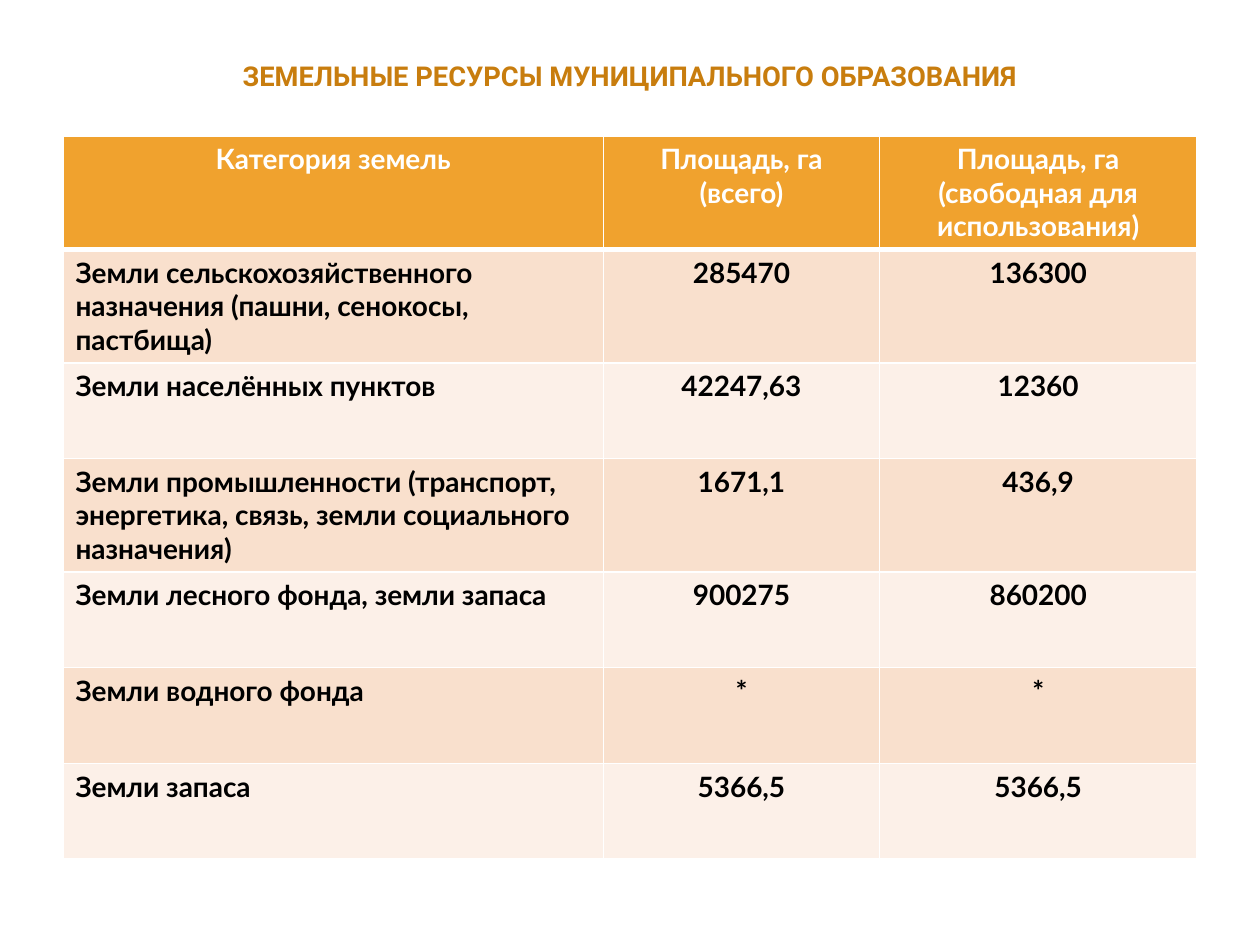
from lxml import etree
from pptx import Presentation
from pptx.dml.color import RGBColor
from pptx.enum.text import PP_ALIGN
from pptx.oxml.ns import qn
from pptx.util import Inches, Pt

LEFT, CENTER = PP_ALIGN.LEFT, PP_ALIGN.CENTER
WHITE, BLACK, TITLE_COLOR = "FFFFFF", "000000", "C87D0E"
HEADER_FILL, BAND_FILLS = "F0A22E", ("FCF0E8", "F9E0CD")

TITLE = "ЗЕМЕЛЬНЫЕ РЕСУРСЫ МУНИЦИПАЛЬНОГО ОБРАЗОВАНИЯ"
COLUMN_WIDTHS = (4.29, 2.19, 2.52)
ROW_HEIGHT = 0.76
LAND_ROWS = [
    ("Категория земель", "Площадь, га\n(всего)",
     "Площадь, га\n(свободная для использования)"),
    ("Земли сельскохозяйственного назначения (пашни, сенокосы, пастбища)",
     "285470", "136300"),
    ("Земли населённых пунктов", "42247,63", "12360"),
    ("Земли промышленности (транспорт, энергетика, связь, "
     "земли социального назначения)", "1671,1", "436,9"),
    ("Земли лесного фонда, земли запаса", "900275", "860200"),
    ("Земли водного фонда", "*", "*"),
    ("Земли запаса", "5366,5", "5366,5"),
]


def rgb(color):
    return RGBColor.from_string(color)


def style_paragraph(para, font_name, size, color, align):
    para.alignment = align
    font = para.font
    font.name, font.size, font.bold = font_name, Pt(size), True
    font.color.rgb = rgb(color)


def set_borders(cell, color, bottom_width):
    """Draw 1 pt borders, with a bottom border of its own width."""
    properties = cell._tc.get_or_add_tcPr()
    widths = {"a:lnL": 1, "a:lnR": 1, "a:lnT": 1, "a:lnB": bottom_width}
    for position, (tag, width) in enumerate(widths.items()):
        line = etree.Element(qn(tag), w=str(Pt(width)))
        fill = etree.SubElement(line, qn("a:solidFill"))
        etree.SubElement(fill, qn("a:srgbClr"), val=color)
        properties.insert(position, line)


def add_title(page, left, top, width, height):
    box = page.shapes.add_textbox(left, top, width, height)
    box.text_frame.word_wrap = True
    para = box.text_frame.paragraphs[0]
    para.text = TITLE
    style_paragraph(para, "Roboto", 15.6, TITLE_COLOR, CENTER)


def fill_cell(cell, text, is_header, fill, align):
    cell.text = text
    cell.fill.solid()
    cell.fill.fore_color.rgb = rgb(fill)
    set_borders(cell, WHITE, 3 if is_header else 1)
    for para in cell.text_frame.paragraphs:
        style_paragraph(para, "Lato", 16, WHITE if is_header else BLACK, align)


def add_land_table(page, left, top, width, height):
    table = page.shapes.add_table(
        len(LAND_ROWS), len(COLUMN_WIDTHS), left, top, width, height).table
    for column, column_width in zip(table.columns, COLUMN_WIDTHS):
        column.width = Inches(column_width)
    for row_index, texts in enumerate(LAND_ROWS):
        table.rows[row_index].height = Inches(ROW_HEIGHT)
        is_header = row_index == 0
        fill = HEADER_FILL if is_header else BAND_FILLS[row_index % 2]
        for column_index, text in enumerate(texts):
            align = CENTER if is_header or column_index else LEFT
            fill_cell(table.cell(row_index, column_index), text,
                      is_header, fill, align)


def main():
    deck = Presentation()
    deck.slide_width, deck.slide_height = Inches(10), Inches(7.5)
    page = deck.slides.add_slide(deck.slide_layouts[6])
    add_title(page, Inches(0.5), Inches(0.42), Inches(9), Inches(0.58))
    add_land_table(page, Inches(0.5), Inches(1.08), Inches(9),
                   Inches(ROW_HEIGHT * len(LAND_ROWS)))
    deck.save("out.pptx")


if __name__ == "__main__":
    main()
